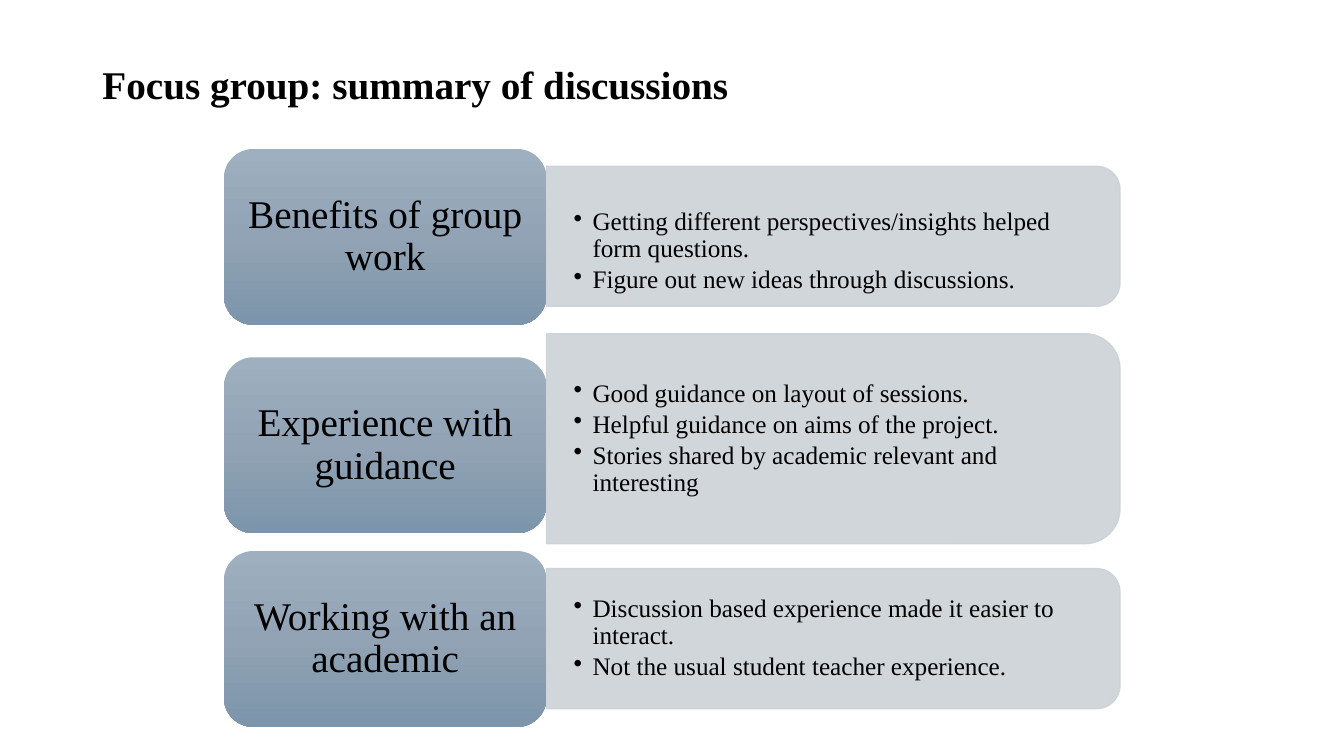
from copy import deepcopy
from lxml import etree
from pptx import Presentation
from pptx.dml.color import RGBColor
from pptx.enum.shapes import MSO_SHAPE
from pptx.enum.text import MSO_ANCHOR, MSO_AUTO_SIZE, PP_ALIGN
from pptx.oxml.ns import qn
from pptx.util import Pt

LEFT, CENTER = PP_ALIGN.LEFT, PP_ALIGN.CENTER
MIDDLE, NO_FIT = MSO_ANCHOR.MIDDLE, MSO_AUTO_SIZE.NONE
CARD, PANEL = MSO_SHAPE.ROUNDED_RECTANGLE, MSO_SHAPE.ROUND_2_SAME_RECTANGLE
CARD_LEFT, CARD_WIDTH, CARD_HEIGHT = 160, 230.4, 125.6
PANEL_LEFT, PANEL_LENGTH = 390.4, 409.6
CARD_GRADIENT = [(0, "9EAFBF"), (0.5, "91A3B4"), (1, "7C95AB")]


def rgb(value):
    return RGBColor.from_string(value)


def write(shape, lines, size=28, bold=False, align=LEFT, inset=(7.2, 3.6), after=0, bullet=None):
    frame = shape.text_frame
    frame.word_wrap = True
    frame.auto_size = NO_FIT
    frame.vertical_anchor = MIDDLE
    frame.margin_left = frame.margin_right = Pt(inset[0])
    frame.margin_top = frame.margin_bottom = Pt(inset[1])
    frame.text = "\n".join(lines)
    for paragraph in frame.paragraphs:
        paragraph.alignment = align
        paragraph.line_spacing = 0.9
        paragraph.space_before = Pt(0)
        paragraph.space_after = Pt(after)
        font = paragraph.runs[0].font
        font.name, font.size, font.bold = "Times New Roman", Pt(size), bold
        font.color.rgb = rgb("000000")
        if bullet:
            properties = paragraph._p.get_or_add_pPr()
            properties.set("marL", str(Pt(13.5)))
            properties.set("indent", str(Pt(-13.5)))
            etree.SubElement(properties, qn("a:buChar")).set("char", bullet)


themes = [
    ("Benefits of group work", 106.4, 168.8, 100, 11,
     ["Getting different perspectives/insights helped form questions.",
      "Figure out new ideas through discussions."]),
    ("Experience with guidance", 255.2, 313.4, 150, 0,
     ["Good guidance on layout of sessions.",
      "Helpful guidance on aims of the project.",
      "Stories shared by academic relevant and interesting"]),
    ("Working with an academic", 393.6, 456.2, 100, 0,
     ["Discussion based experience made it easier to interact.",
      "Not the usual student teacher experience."]),
]

deck = Presentation()
deck.slide_width, deck.slide_height = Pt(960), Pt(540)
slide = deck.slides.add_slide(deck.slide_layouts[5])
shapes = slide.shapes

heading = shapes.title
heading.left, heading.top, heading.width, heading.height = Pt(66), Pt(29), Pt(828), Pt(65.5)
write(heading, ["Focus group: summary of discussions"], bold=True)

for theme, card_top, panel_middle, panel_height, drop, findings in themes:
    panel = shapes.add_shape(
        PANEL, Pt(PANEL_LEFT + (PANEL_LENGTH - panel_height) / 2),
        Pt(panel_middle - PANEL_LENGTH / 2), Pt(panel_height), Pt(PANEL_LENGTH))
    panel.rotation = 90
    panel.shadow.inherit = False
    panel.line.width = Pt(1)
    panel.fill.solid()
    for color in (panel.fill.fore_color, panel.line.color):
        color.rgb = rgb("CCD2D8")
    for tint in panel._element.spPr.iter(qn("a:srgbClr")):
        etree.SubElement(tint, qn("a:alpha")).set("val", "90000")

    comments = shapes.add_textbox(
        Pt(PANEL_LEFT), Pt(panel_middle - panel_height / 2 + drop), Pt(404), Pt(panel_height))
    write(comments, findings, size=18, inset=(19.4, 10), after=2.7, bullet="•")

    card = shapes.add_shape(CARD, Pt(CARD_LEFT), Pt(card_top), Pt(CARD_WIDTH), Pt(CARD_HEIGHT))
    card.shadow.inherit = False
    card.line.fill.background()
    card.fill.gradient()
    card.fill.gradient_angle = 270
    stop_list = card._element.spPr.find(".//" + qn("a:gsLst"))
    stop_list.insert(1, deepcopy(stop_list[0]))
    for stop, (position, shade) in zip(card.fill.gradient_stops, CARD_GRADIENT):
        stop.position = position
        stop.color.rgb = rgb(shade)
    write(card, [theme], align=CENTER, inset=(9, 4))

deck.save("out.pptx")
